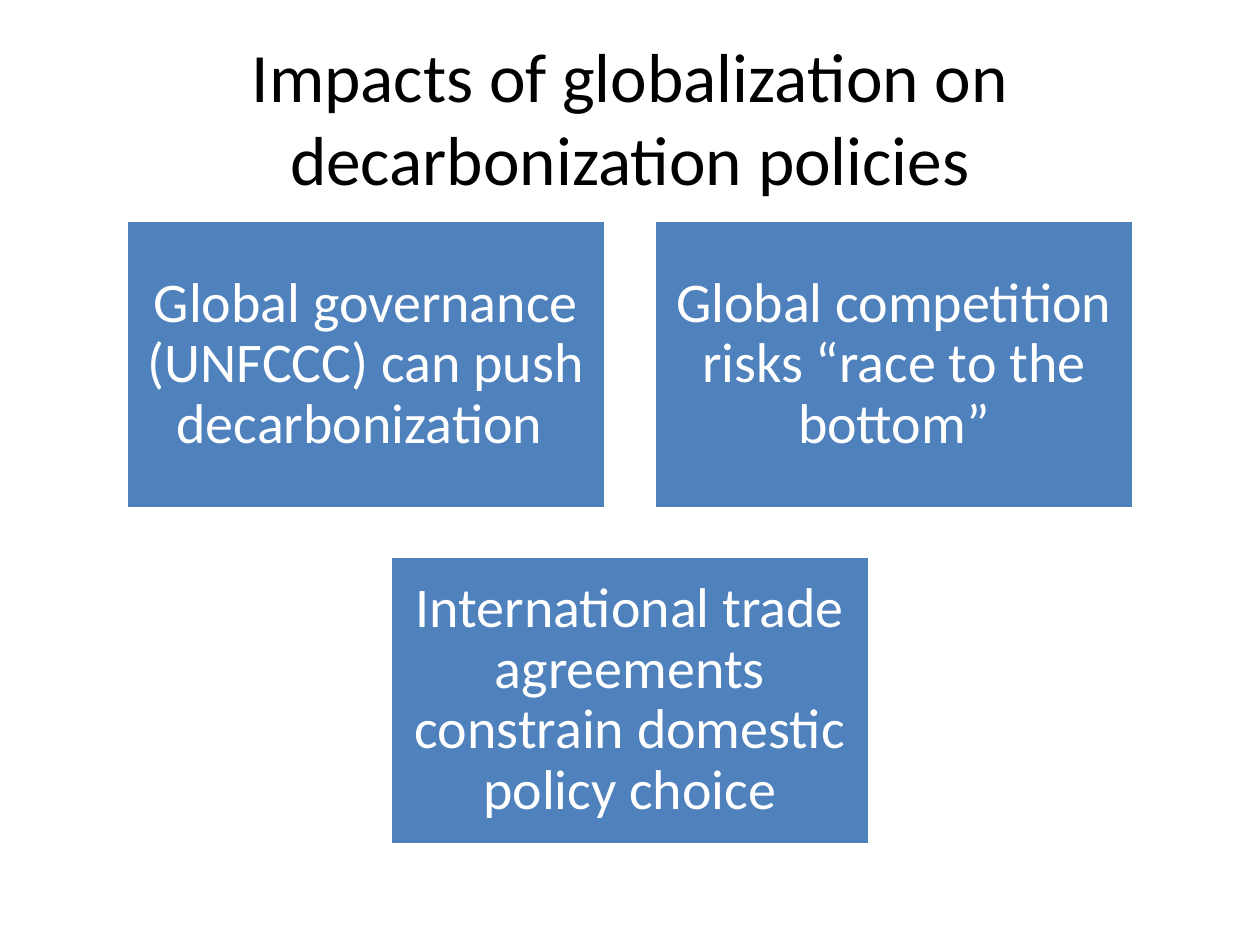
from pptx import Presentation
from pptx.dml.color import RGBColor
from pptx.enum.shapes import MSO_SHAPE as Shape
from pptx.enum.text import MSO_ANCHOR as Anchor, PP_ALIGN as Align
from pptx.util import Pt


def color(value):
    return RGBColor.from_string(value)


def write(box, text, size=32, ink="FFFFFF", font="Calibri", spacing=1.0, inset=(7.2, 3.6)):
    frame = box.text_frame
    frame.word_wrap = True
    frame.vertical_anchor = Anchor.MIDDLE
    frame.margin_left = frame.margin_right = Pt(inset[0])
    frame.margin_top = frame.margin_bottom = Pt(inset[1])
    para = frame.paragraphs[0]
    para.alignment = Align.CENTER
    para.line_spacing = spacing
    span = para.add_run()
    span.text = text
    span.font.name = font
    span.font.size = Pt(size)
    span.font.color.rgb = color(ink)


class Painter:
    """Draws titles and filled cards on one page in a shared style."""

    card_fill = "4F81BD"
    card_line = "FFFFFF"
    title_ink = "000000"

    def __init__(self, page):
        self.page = page

    def title(self, text, left, top, width, height):
        box = self.page.shapes.add_textbox(Pt(left), Pt(top), Pt(width), Pt(height))
        write(box, text, size=39.6, ink=self.title_ink)

    def card(self, text, left, top, width, height):
        box = self.page.shapes.add_shape(
            Shape.RECTANGLE, Pt(left), Pt(top), Pt(width), Pt(height))
        box.shadow.inherit = False
        box.fill.solid()
        box.fill.fore_color.rgb = color(self.card_fill)
        box.line.color.rgb = color(self.card_line)
        box.line.width = Pt(2)
        write(box, text, spacing=0.9, inset=(9.6, 9.6))


def main():
    deck = Presentation()
    deck.slide_width, deck.slide_height = Pt(720), Pt(540)
    painter = Painter(deck.slides.add_slide(deck.slide_layouts[6]))
    painter.title("Impacts of globalization on decarbonization policies", 36, 21.6, 648, 90)

    rows = [
        ["Global governance (UNFCCC) can push decarbonization ",
         "Global competition risks “race to the bottom”"],
        ["International trade agreements constrain domestic policy choice"],
    ]
    width = 576 / 2.1
    height, gap = 0.6 * width, 0.1 * width
    for row, texts in enumerate(rows):
        row_width = len(texts) * (width + gap) - gap
        for column, text in enumerate(texts):
            left = (720 - row_width) / 2 + column * (width + gap)
            painter.card(text, left, 126 + row * (height + gap), width, height)

    deck.save("out.pptx")


if __name__ == "__main__":
    main()
